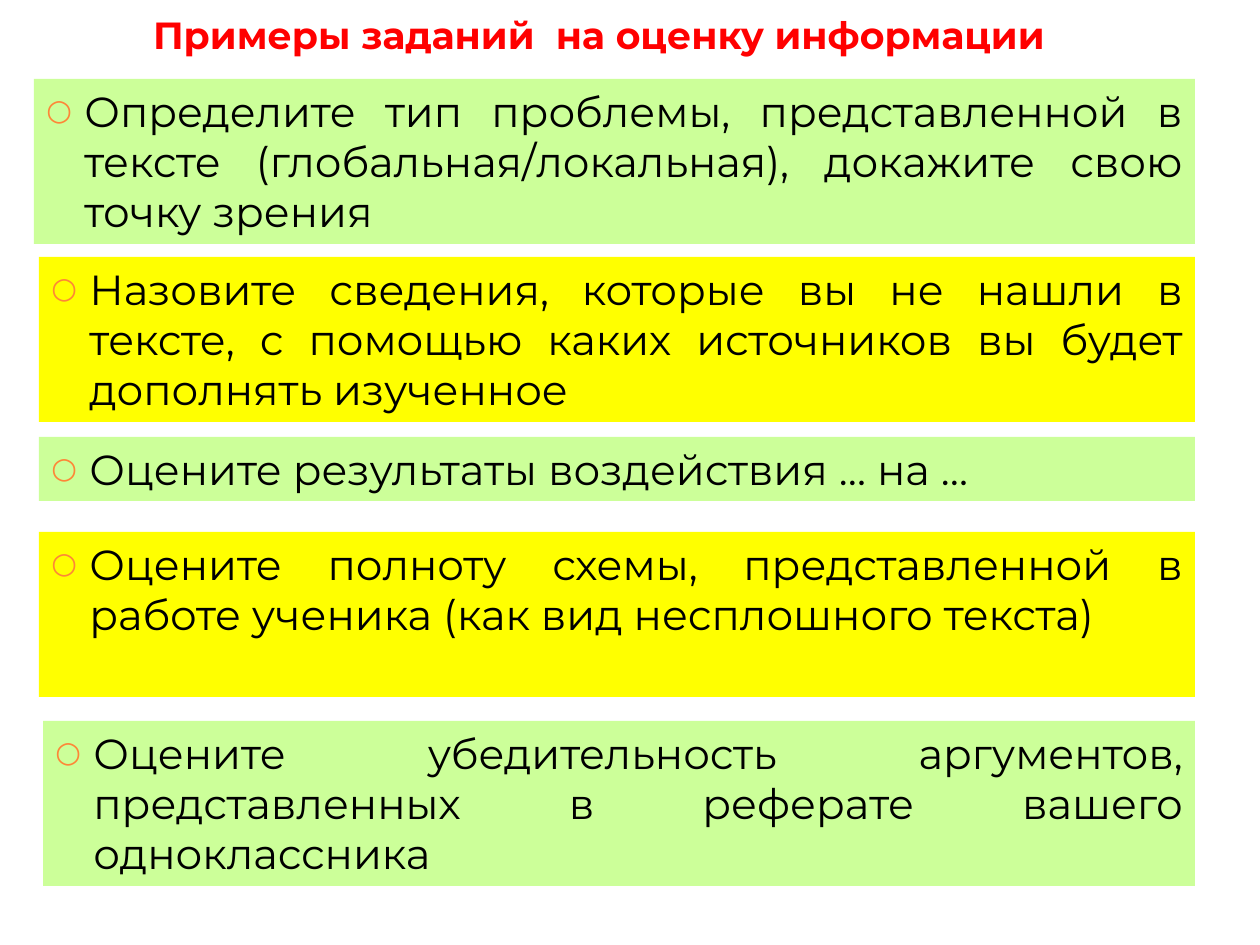
from lxml.etree import SubElement
from pptx import Presentation
from pptx.dml.color import RGBColor
from pptx.enum.shapes import MSO_SHAPE as Shape
from pptx.enum.text import MSO_ANCHOR as Anchor, MSO_AUTO_SIZE as AutoSize, PP_ALIGN as Align
from pptx.oxml.ns import qn
from pptx.util import Emu, Inches, Pt

PX_PER_INCH = 126
RED = RGBColor(0xFF, 0x00, 0x00)
BLACK = RGBColor(0x00, 0x00, 0x00)
GREEN = RGBColor(0xCC, 0xFF, 0x99)
YELLOW = RGBColor(0xFF, 0xFF, 0x00)
ORANGE = RGBColor(0xFE, 0x86, 0x37)

CARD_RIGHT = 1195
# left, top, height, text; the fills alternate
TASKS = [
    (34, 79, 165, "Определите тип проблемы, представленной в тексте "
                  "(глобальная/локальная), докажите свою точку зрения"),
    (39, 257, 165, "Назовите сведения, которые вы не нашли в тексте, с помощью "
                   "каких источников вы будет дополнять изученное"),
    (39, 437, 64, "Оцените результаты воздействия … на …"),
    (39, 532, 165, "Оцените полноту схемы, представленной в работе ученика "
                   "(как вид несплошного текста)"),
    (43, 721, 165, "Оцените убедительность аргументов, представленных "
                   "в реферате вашего одноклассника"),
]


def px(length):
    return Emu(round(length * Inches(1) / PX_PER_INCH))


class SlideBuilder:
    font = "Montserrat"
    title_size = 21.6
    body_size = 24
    indent = 38

    def __init__(self, slide):
        self.slide = slide

    def add_run(self, paragraph, text, size, color, bold=False):
        run = paragraph.add_run()
        run.text = text
        run.font.name = self.font
        run.font.size = Pt(size)
        run.font.bold = bold
        run.font.color.rgb = color

    def title(self, left, top, width, height, text):
        shape = self.slide.shapes.title
        shape.left, shape.top = px(left), px(top)
        shape.width, shape.height = px(width), px(height)
        frame = shape.text_frame
        frame.auto_size = AutoSize.NONE
        frame.vertical_anchor = Anchor.MIDDLE
        paragraph = frame.paragraphs[0]
        paragraph.alignment = Align.CENTER
        self.add_run(paragraph, text, self.title_size, RED, bold=True)

    def bullet(self, paragraph):
        """Give the paragraph a small orange ring and a hanging indent."""
        properties = paragraph._p.get_or_add_pPr()
        properties.set("marL", str(px(self.indent)))
        properties.set("indent", str(-px(self.indent)))
        color = SubElement(properties, qn("a:buClr"))
        SubElement(color, qn("a:srgbClr"), val=str(ORANGE))
        SubElement(properties, qn("a:buSzPct"), val="70000")
        SubElement(properties, qn("a:buFont"), typeface=self.font)
        SubElement(properties, qn("a:buChar"), char="○")

    def card(self, left, top, width, height, fill, text):
        shape = self.slide.shapes.add_shape(
            Shape.RECTANGLE, px(left), px(top), px(width), px(height))
        shape.shadow.inherit = False
        shape.fill.solid()
        shape.fill.fore_color.rgb = fill
        shape.line.fill.background()
        frame = shape.text_frame
        frame.word_wrap = True
        frame.vertical_anchor = Anchor.TOP
        paragraph = frame.paragraphs[0]
        paragraph.alignment = Align.JUSTIFY
        paragraph.space_before = Pt(6)
        self.bullet(paragraph)
        self.add_run(paragraph, text, self.body_size, BLACK)


def main():
    presentation = Presentation()
    presentation.slide_width = Inches(10)
    presentation.slide_height = Inches(7.5)
    title_only = presentation.slide_layouts[5]
    builder = SlideBuilder(presentation.slides.add_slide(title_only))

    builder.title(84, -14, 1030, 97, "Примеры заданий  на оценку информации")
    for index, (left, top, height, text) in enumerate(TASKS):
        fill = YELLOW if index % 2 else GREEN
        builder.card(left, top, CARD_RIGHT - left, height, fill, text)

    presentation.save("out.pptx")


if __name__ == "__main__":
    main()
